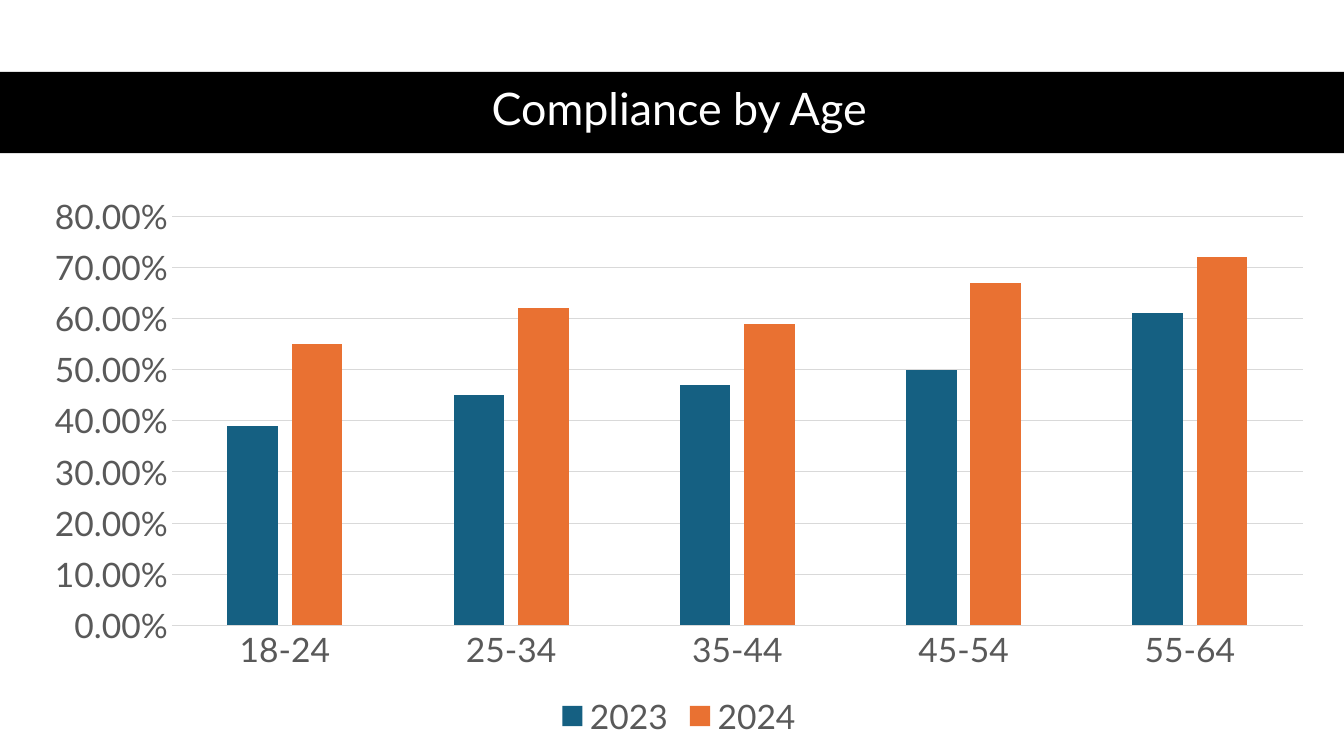
from pptx import Presentation
from pptx.chart.data import CategoryChartData
from pptx.dml.color import RGBColor
from pptx.enum.chart import XL_CHART_TYPE as ChartType, XL_LEGEND_POSITION as LegendPos, XL_TICK_MARK as Tick
from pptx.enum.shapes import MSO_SHAPE as Shape
from pptx.enum.text import MSO_ANCHOR as Anchor, PP_ALIGN as Align
from pptx.util import Cm, Pt

TITLE = "Compliance by Age"
AGES = ["18-24", "25-34", "35-44", "45-54", "55-64"]
SERIES = [
    ("2023", "156082", (0.39, 0.45, 0.47, 0.5, 0.61)),
    ("2024", "E97132", (0.55, 0.62, 0.59, 0.67, 0.72)),
]
FONT, GREY, RULE = "Lato", "595959", "D9D9D9"
WIDTH, HEIGHT = Cm(33.87), Cm(19.05)
BAND_TOP, BAND_HEIGHT = Cm(1.81), Cm(2.05)


def rgb(value):
    return RGBColor.from_string(value)


def style_font(font, size, color):
    font.name = FONT
    font.size = Pt(size)
    font.bold = False
    font.color.rgb = rgb(color)


def style_line(line):
    line.color.rgb = rgb(RULE)
    line.width = Pt(0.75)


def add_title(s):
    band = s.shapes.add_shape(Shape.RECTANGLE, 0, BAND_TOP, WIDTH, BAND_HEIGHT)
    band.shadow.inherit = False
    band.fill.solid()
    band.fill.fore_color.rgb = rgb("000000")
    band.line.fill.background()
    title = s.shapes.title
    title.left, title.top, title.width, title.height = Cm(1.55), Cm(1.78), Cm(31.14), BAND_HEIGHT
    title._element.addprevious(band._element)
    tf = title.text_frame
    tf.text = TITLE
    tf.word_wrap = True
    tf.vertical_anchor = Anchor.MIDDLE
    p = tf.paragraphs[0]
    p.alignment = Align.CENTER
    p.line_spacing = 0.9
    style_font(p.runs[0].font, 32, "FFFFFF")


def add_compliance_chart(s):
    data = CategoryChartData(number_format="0%")
    data.categories = AGES
    for name, _, values in SERIES:
        data.add_series(name, values)
    chart = s.shapes.add_chart(
        ChartType.COLUMN_CLUSTERED, Cm(0.73), Cm(4.65), Cm(32.76), Cm(14.08), data
    ).chart
    chart.has_title = False
    style_font(chart.font, 24, GREY)
    chart.has_legend = True
    chart.legend.position = LegendPos.BOTTOM
    chart.legend.include_in_layout = False
    style_font(chart.legend.font, 24, GREY)

    plot = chart.plots[0]
    plot.vary_by_categories = False
    plot.gap_width, plot.overlap = 219, -27
    for series, (_, color, _) in zip(plot.series, SERIES):
        series.invert_if_negative = False
        series.format.fill.solid()
        series.format.fill.fore_color.rgb = rgb(color)

    ages, rates = chart.category_axis, chart.value_axis
    for axis in (ages, rates):
        axis.major_tick_mark = axis.minor_tick_mark = Tick.NONE
        style_font(axis.tick_labels.font, 24, GREY)
    style_line(ages.format.line)
    rates.format.line.fill.background()
    rates.has_major_gridlines = True
    style_line(rates.major_gridlines.format.line)
    rates.minimum_scale, rates.maximum_scale, rates.major_unit = 0, 0.8, 0.1
    rates.tick_labels.number_format = "0.00%"
    rates.tick_labels.number_format_is_linked = False


def main():
    prs = Presentation()
    prs.slide_width, prs.slide_height = WIDTH, HEIGHT
    s = prs.slides.add_slide(prs.slide_layouts[5])
    add_title(s)
    add_compliance_chart(s)
    prs.save("out.pptx")


if __name__ == "__main__":
    main()
